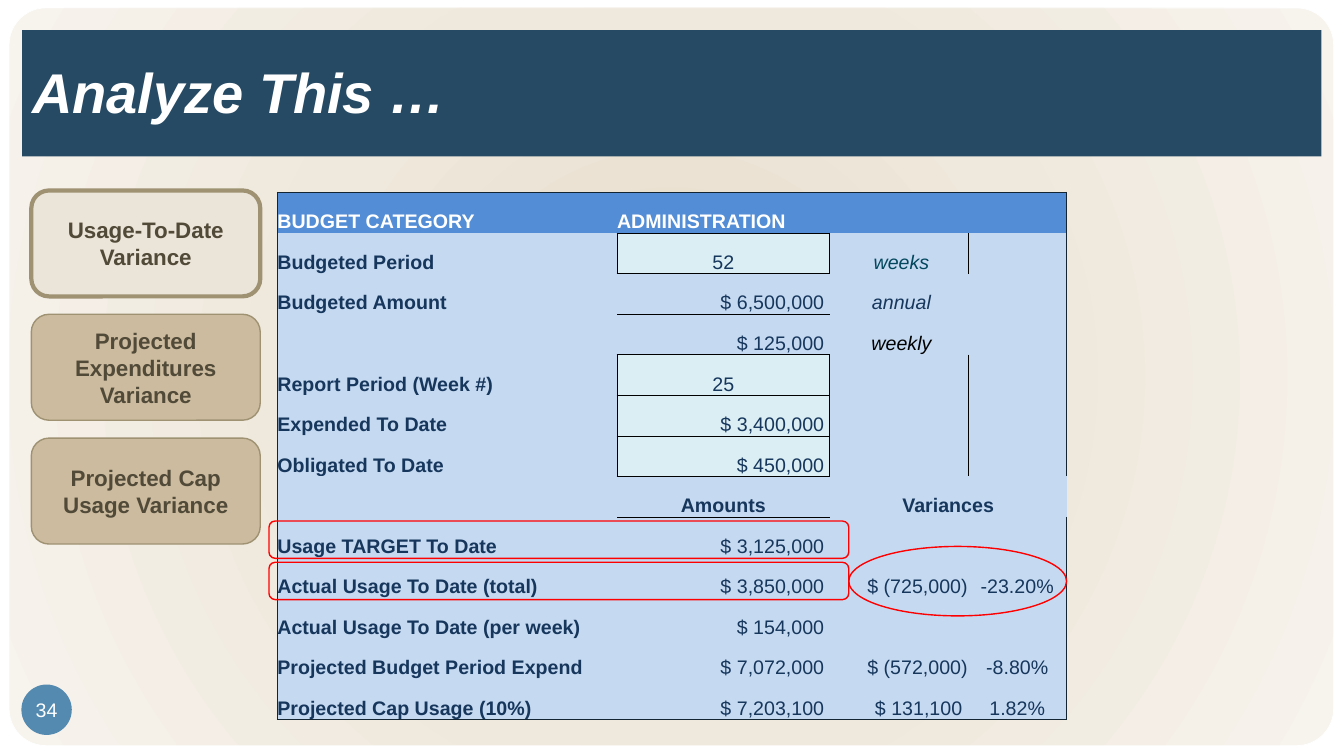
"""Build the budget variance analysis slide."""
from lxml import etree
from pptx import Presentation
from pptx.dml.color import RGBColor
from pptx.enum.shapes import MSO_SHAPE
from pptx.enum.text import MSO_ANCHOR, PP_ALIGN
from pptx.oxml import parse_xml
from pptx.util import Cm, Pt

RECTANGLE, ROUNDED, OVAL = MSO_SHAPE.RECTANGLE, MSO_SHAPE.ROUNDED_RECTANGLE, MSO_SHAPE.OVAL
LEFT, CENTER, RIGHT = PP_ALIGN.LEFT, PP_ALIGN.CENTER, PP_ALIGN.RIGHT
MIDDLE, BOTTOM = MSO_ANCHOR.MIDDLE, MSO_ANCHOR.BOTTOM

WHITE = RGBColor(0xFF, 0xFF, 0xFF)
BLACK = RGBColor(0x00, 0x00, 0x00)
RED = RGBColor(0xFF, 0x00, 0x00)
TITLE_BLUE = RGBColor(0x26, 0x4A, 0x64)
BADGE_BLUE = RGBColor(0x54, 0x8A, 0xB0)
TAN = RGBColor(0xCC, 0xBB, 0x9E)
PALE_TAN = RGBColor(0xEB, 0xE4, 0xD8)
TAN_EDGE = RGBColor(0x9E, 0x92, 0x73)
BROWN = RGBColor(0x51, 0x4A, 0x38)
HEADER_BLUE = RGBColor(0x53, 0x8D, 0xD5)
BODY_BLUE = RGBColor(0xC5, 0xD9, 0xF1)
INPUT_BLUE = RGBColor(0xDA, 0xEE, 0xF3)
NAVY = RGBColor(0x16, 0x36, 0x5C)
TEAL = RGBColor(0x02, 0x47, 0x5D)
FRAME = RGBColor(0x13, 0x25, 0x32)
PANEL_STOPS = [(0, RGBColor(0xE6, 0xDB, 0xC9)), (50, RGBColor(0xEF, 0xE8, 0xDC)),
               (100, RGBColor(0xF7, 0xF3, 0xED))]
DRAWING_NS = "http://schemas.openxmlformats.org/drawingml/2006/main"
NO_GRID_STYLE = "{2D5ABB26-0587-4C30-8999-92F81FD0307C}"

prs = Presentation()
prs.slide_width, prs.slide_height = Cm(33.87), Cm(19.05)
slide = prs.slides.add_slide(prs.slide_layouts[6])
slide.background.fill.solid()
slide.background.fill.fore_color.rgb = WHITE


def add_box(kind, box, fill=None, line=None, weight=1):
    shape = slide.shapes.add_shape(kind, *[Cm(length) for length in box])
    shape.shadow.inherit = False
    if fill is None:
        shape.fill.background()
    else:
        shape.fill.solid()
        shape.fill.fore_color.rgb = fill
    if line is None:
        shape.line.fill.background()
    else:
        shape.line.color.rgb = line
        shape.line.width = Pt(weight)
    return shape


def write(holder, text, size, color, align, bold=False, italic=False):
    paragraph = holder.text_frame.paragraphs[0]
    paragraph.text = text
    paragraph.alignment = align
    font = paragraph.font
    font.name, font.size, font.bold, font.italic = "Arial", Pt(size), bold, italic
    font.color.rgb = color


panel = add_box(ROUNDED, (0.23, 0.2, 33.38, 18.59), WHITE, WHITE, 0.5)
panel.adjustments[0] = 0.05
stops = "".join(f'<a:gs pos="{pos * 1000}"><a:srgbClr val="{color}"/></a:gs>'
                for pos, color in PANEL_STOPS)
panel_fill = panel.fill._xPr.find(f"{{{DRAWING_NS}}}solidFill")
panel_fill.getparent().replace(panel_fill, parse_xml(
    f'<a:gradFill xmlns:a="{DRAWING_NS}" rotWithShape="1"><a:gsLst>{stops}</a:gsLst>'
    '<a:path path="circle"><a:fillToRect l="50000" t="50000" r="50000" b="50000"/></a:path>'
    '</a:gradFill>'))

title = add_box(RECTANGLE, (0.56, 0.76, 32.74, 3.18), TITLE_BLUE)
title.text_frame.vertical_anchor = MIDDLE
title.text_frame.margin_bottom = Cm(0.25)
write(title, "Analyze This …", 40, WHITE, LEFT, bold=True, italic=True)

page_badge = add_box(OVAL, (0.54, 17.25, 1.27, 1.27), BADGE_BLUE)
badge_frame = page_badge.text_frame
badge_frame.margin_left = badge_frame.margin_right = 0
badge_frame.margin_top = badge_frame.margin_bottom = 0
badge_frame.word_wrap = False
badge_frame.vertical_anchor = MIDDLE
write(page_badge, "34", 14, WHITE, CENTER)

topics = [("Usage-To-Date Variance", PALE_TAN, 3),
          ("Projected Expenditures Variance", TAN, 1),
          ("Projected Cap Usage Variance", TAN, 1)]
for index, (topic, fill, weight) in enumerate(topics):
    button = add_box(ROUNDED, (0.79, 4.8 + 3.12 * index, 5.77, 2.67), fill, TAN_EDGE, weight)
    button.text_frame.vertical_anchor = MIDDLE
    write(button, topic, 16, BROWN, CENTER, bold=True)

budget_rows = [
    ("BUDGET CATEGORY", "ADMINISTRATION", "", ""),
    ("Budgeted Period", "52", " weeks", ""),
    ("Budgeted Amount", " $ 6,500,000 ", " annual", ""),
    ("", " $ 125,000 ", " weekly", ""),
    ("Report Period (Week #)", "25", "", ""),
    ("Expended To Date", " $ 3,400,000 ", "", ""),
    ("Obligated To Date", " $ 450,000 ", "", ""),
    ("", "Amounts", "Variances", ""),
    ("Usage TARGET To Date", " $ 3,125,000 ", "", ""),
    ("Actual Usage To Date (total)", " $ 3,850,000 ", " $ (725,000)", "-23.20%"),
    ("Actual Usage To Date (per week)", " $ 154,000 ", "", ""),
    ("Projected Budget Period Expend", " $ 7,072,000 ", " $ (572,000)", "-8.80%"),
    ("Projected Cap Usage (10%)", " $ 7,203,100 ", " $ 131,100 ", "1.82%"),
]
column_widths = [8.56, 5.36, 3.48, 2.49]
input_cells = {(1, 1), (4, 1), (5, 1), (6, 1)}
special_colors = {(1, 2): TEAL, (3, 2): BLACK}
subheading_row = 7
sides = {"lnL": (0, -1), "lnR": (0, 1), "lnT": (-1, 0), "lnB": (1, 0)}

row_count, column_count = len(budget_rows), len(column_widths)
budget = slide.shapes.add_table(row_count, column_count, Cm(6.99), Cm(4.85),
                                Cm(19.89), Cm(13.29)).table
budget.first_row = budget.horz_banding = False
budget._tbl.tblPr[0].text = NO_GRID_STYLE
for column, width in zip(budget.columns, column_widths):
    column.width = Cm(width)

for row, texts in enumerate(budget_rows):
    for col, text in enumerate(texts):
        cell = budget.cell(row, col)
        cell.margin_left = cell.margin_right = cell.margin_top = cell.margin_bottom = 0
        cell.vertical_anchor = BOTTOM
        is_input = (row, col) in input_cells

        for side, (down, across) in sides.items():
            beside = (row + down, col + across)
            if is_input or beside in input_cells:
                edge, weight = BLACK, 0.5
            elif not (0 <= beside[0] < row_count and 0 <= beside[1] < column_count):
                edge, weight = FRAME, 1
            else:
                continue
            border = etree.SubElement(cell._tc.get_or_add_tcPr(), f"{{{DRAWING_NS}}}{side}",
                                      w=str(Pt(weight)))
            solid = etree.SubElement(border, f"{{{DRAWING_NS}}}solidFill")
            etree.SubElement(solid, f"{{{DRAWING_NS}}}srgbClr", val=str(edge))

        cell.fill.solid()
        cell.fill.fore_color.rgb = (HEADER_BLUE if row == 0 else
                                    INPUT_BLUE if is_input else BODY_BLUE)
        if row == 0 or col == 0:
            align = LEFT
        else:
            align = RIGHT if "$" in text else CENTER
        color = WHITE if row == 0 else special_colors.get((row, col), NAVY)
        write(cell, text, 14, color, align, bold=col == 0 or row in (0, subheading_row),
              italic=col == 2 and 1 <= row <= 3)

budget.cell(subheading_row, 2).merge(budget.cell(subheading_row, 3))

for top in (13.13, 14.17):
    add_box(ROUNDED, (6.78, top, 14.61, 0.94), line=RED)
add_box(OVAL, (21.39, 13.77, 5.49, 1.75), line=RED)

prs.save("out.pptx")
